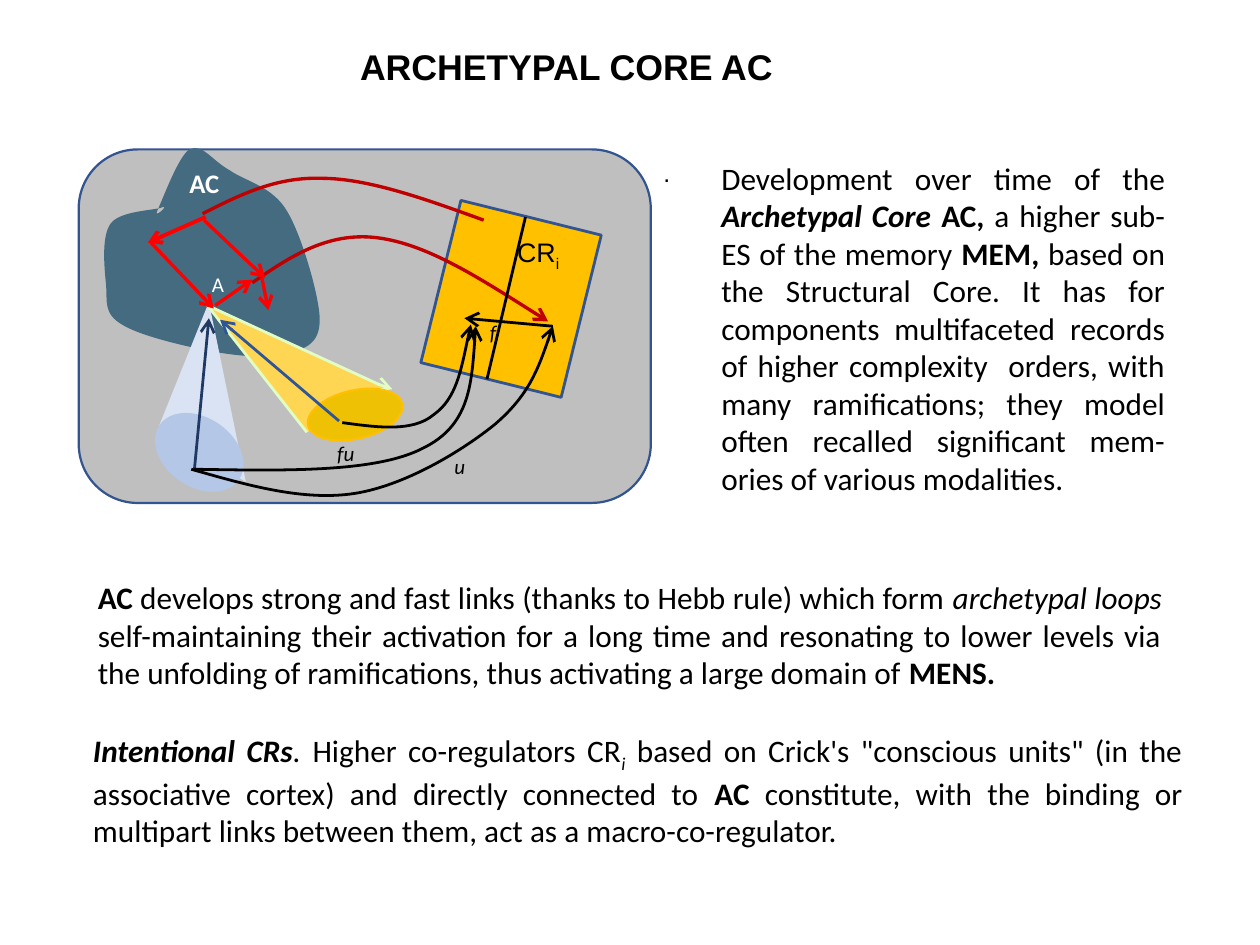
import pptx
import pptx.dml.color
import pptx.enum.shapes
import pptx.enum.text
import pptx.oxml
import pptx.oxml.ns
import pptx.util

PX = 9144
MSO = pptx.enum.shapes.MSO_SHAPE
ALIGN = pptx.enum.text.PP_ALIGN
AUTO_SIZE = pptx.enum.text.MSO_AUTO_SIZE


def color(value):
    return pptx.dml.color.RGBColor.from_string(value)


def new_element(tag, attributes=""):
    namespace = pptx.oxml.ns.nsdecls("a")
    return pptx.oxml.parse_xml(f"<a:{tag} {namespace} {attributes}/>")


presentation = pptx.Presentation()
presentation.slide_width = 784 * PX
presentation.slide_height = 588 * PX
slide = presentation.slides.add_slide(presentation.slide_layouts[6])

BLACK = {"line": "000000", "width": 1.25}
BLACK_ARROW = {**BLACK, "arrow": True}
RED_ARROW = {"line": "FF0000", "width": 1.5, "arrow": True}
DARK_RED = {"line": "C00000", "width": 1.5}

figures = [
    (MSO.ROUNDED_RECTANGLE, (49, 93, 356, 220), {"fill": "BFBFBF", "line": "325491", "width": 1}),
    ("curve", [(98, 131), (101, 125), (111, 97), (118, 93), (126, 89), (132, 100), (143, 106),
               (153, 113), (170, 116), (179, 132), (188, 147), (199, 185), (199, 199),
               (199, 214), (190, 217), (179, 220), (168, 223), (151, 222), (134, 219),
               (117, 216), (87, 209), (76, 202), (64, 195), (67, 187), (66, 177),
               (65, 166), (63, 147), (69, 139), (75, 131), (97, 131), (101, 129),
               (106, 127), (95, 137), (98, 131)], {"fill": "456B81", "closed": True}),
    (MSO.RECTANGLE, (273, 134, 90, 104),
     {"fill": "FFC000", "line": "325491", "width": 1.25, "rotation": 13.9}),
    ("curve", [(157, 176), (180, 160), (204, 144), (235, 148), (266, 152), (303, 176), (341, 200)],
     {**DARK_RED, "arrow": True}),
    ("outline", [(99, 265), (130, 188), (153, 300)], {"fill": "DAE3F3"}),
    (MSO.OVAL, (94, 260, 60, 43), {"fill": "B4C7E7", "rotation": 34.5}),
    ("straight", [(121, 292), (130, 198)], {"line": "203864", "width": 1.25, "arrow": True}),
    ("outline", [(191, 269), (129, 190), (244, 243), (244, 242)],
     {"fill": "FFD653", "line": "E1FDC5", "width": 1.25, "arrow": True}),
    (MSO.OVAL, (191, 243, 60, 30),
     {"fill": "EEC104", "line": "FFC000", "width": 1, "rotation": 347}),
    ("straight", [(211, 262), (137, 199)], {"line": "2F5597", "width": 1.25, "arrow": True}),
    ("straight", [(327, 135), (303, 236)], BLACK),
    ("curve", [(119, 292), (154, 302), (189, 312), (221, 307), (252, 302), (287, 281), (308, 264),
               (329, 246), (337, 224), (344, 203)], BLACK_ARROW),
    ("curve", [(213, 263), (235, 266), (257, 269), (270, 258), (284, 248), (288, 225), (293, 202)],
     BLACK_ARROW),
    ("straight", [(344, 203), (289, 198)], BLACK_ARROW),
    ("curve", [(121, 292), (178, 293), (234, 294), (263, 279), (292, 265), (294, 234), (296, 203)],
     BLACK_ARROW),
    ("straight", [(128, 135), (92, 151)], {**RED_ARROW, "width": 1.75}),
    ("straight", [(94, 151), (133, 192)], RED_ARROW),
    ("straight", [(134, 190), (157, 174)], RED_ARROW),
    ("straight", [(163, 173), (167, 193)], RED_ARROW),
    ("straight", [(127, 137), (165, 173)], RED_ARROW),
    ("curve", [(126, 133), (148, 122), (171, 110), (200, 111), (229, 111), (265, 124), (301, 137)],
     DARK_RED),
]

for kind, geometry, look in figures:
    if kind == "straight":
        ends = [value * PX for point in geometry for value in point]
        shape = slide.shapes.add_connector(pptx.enum.shapes.MSO_CONNECTOR.STRAIGHT, *ends)
    elif kind in ("curve", "outline"):
        builder = slide.shapes.build_freeform(*geometry[0], scale=PX)
        builder.add_line_segments(geometry[1:], close=look.get("closed", False))
        shape = builder.convert_to_shape()
    else:
        shape = slide.shapes.add_shape(kind, *[value * PX for value in geometry])
        shape.rotation = look.get("rotation", 0)
    properties = shape._element.spPr

    if kind == "curve":
        segments = list(properties.iter(pptx.oxml.ns.qn("a:lnTo")))
        for first in range(0, len(segments), 3):
            bezier = new_element("cubicBezTo")
            segments[first].addprevious(bezier)
            for segment in segments[first:first + 3]:
                bezier.append(segment[0])
                segment.getparent().remove(segment)

    if kind != "straight":
        shape.shadow.inherit = False
        if "fill" in look:
            shape.fill.solid()
            shape.fill.fore_color.rgb = color(look["fill"])
        else:
            shape.fill.background()
    if "line" in look:
        shape.line.color.rgb = color(look["line"])
        shape.line.width = pptx.util.Pt(look["width"])
    else:
        shape.line.fill.background()
    if "arrow" in look:
        outline = properties.find(pptx.oxml.ns.qn("a:ln"))
        outline.append(new_element("tailEnd", 'type="arrow"'))
    if kind == "straight":
        properties.append(new_element("effectLst"))

BOLD = {"bold": True}
ITALIC = {"italic": True}
BOLD_ITALIC = {"bold": True, "italic": True}
SUBSCRIPT = {"baseline": "-25000"}

texts = [
    ((114, 23, 477, 37), ALIGN.CENTER, "Arial", 16, "000000", [("ARCHETYPAL CORE AC", BOLD)]),
    ((51, 355, 682, 110), ALIGN.JUSTIFY, "Calibri", 14, "000000", [
        ("AC", BOLD),
        (" develops strong and fast links (thanks to Hebb rule) which form ", {}),
        ("archetypal loops ", ITALIC),
        ("self-maintaining their activation for a long time and resonating to lower levels "
         "via the unfolding of ramifications, thus activating a large domain of ", {}),
        ("MENS. ", BOLD)]),
    ((403, 93, 350, 29), ALIGN.JUSTIFY, "Arial", 11.1, "000000", [(". ", {})]),
    ((439, 94, 296, 222), ALIGN.JUSTIFY, "Calibri", 14, "000000", [
        ("Development over time of the ", {}),
        ("Archetypal Core ", BOLD_ITALIC),
        ("AC,", BOLD),
        (" a higher sub-ES of the memory ", {}),
        ("MEM, ", BOLD),
        ("based on the Structural Core. It has for components multifaceted records of higher "
         "complexity  orders, with many ramifications; they model often recalled significant "
         "mem-ories of various modalities.", {})]),
    ((48, 450, 698, 81), ALIGN.JUSTIFY, "Calibri", 14, "000000", [
        ("Intentional CRs", BOLD_ITALIC),
        (". ", ITALIC),
        ("Higher co-regulators CR", {}),
        ("i", {**ITALIC, **SUBSCRIPT}),
        (" based on Crick's \"conscious units\" (in the associative cortex) and directly "
         "connected to ", {}),
        ("AC ", BOLD),
        ("constitute, with the binding or multipart links between them, act as a "
         "macro-co-regulator.", {})]),
    ((122, 164, 34, 28), ALIGN.LEFT, "Calibri", 9.4, "FFFFFF", [("A", {})]),
    ((108, 99, 46, 30), ALIGN.LEFT, "Calibri", 12, "FFFFFF", [("AC", BOLD)]),
    ((273, 277, 43, 28), ALIGN.LEFT, "Calibri", 9.4, "000000", [("u", ITALIC)]),
    ((295, 194, 57, 28), ALIGN.LEFT, "Calibri", 9.4, "000000", [("f", ITALIC)]),
    ((200, 269, 43, 28), ALIGN.LEFT, "Calibri", 9.4, "000000", [("fu", ITALIC)]),
    ((312, 142, 67, 30), ALIGN.LEFT, "Arial", 12, "000000", [("CR", {}), ("i", SUBSCRIPT)]),
]

for box, alignment, font_name, size, text_color, runs in texts:
    text_box = slide.shapes.add_textbox(*[value * PX for value in box])
    text_box.text_frame.word_wrap = True
    text_box.text_frame.auto_size = AUTO_SIZE.SHAPE_TO_FIT_TEXT
    paragraph = text_box.text_frame.paragraphs[0]
    paragraph.alignment = alignment
    for words, emphasis in runs:
        run = paragraph.add_run()
        run.text = words
        run.font.color.rgb = color(text_color)
        formats = {"name": font_name, "size": pptx.util.Pt(size), **emphasis}
        baseline = formats.pop("baseline", None)
        for attribute, value in formats.items():
            setattr(run.font, attribute, value)
        if baseline:
            run._r.get_or_add_rPr().set("baseline", baseline)

presentation.save("out.pptx")
